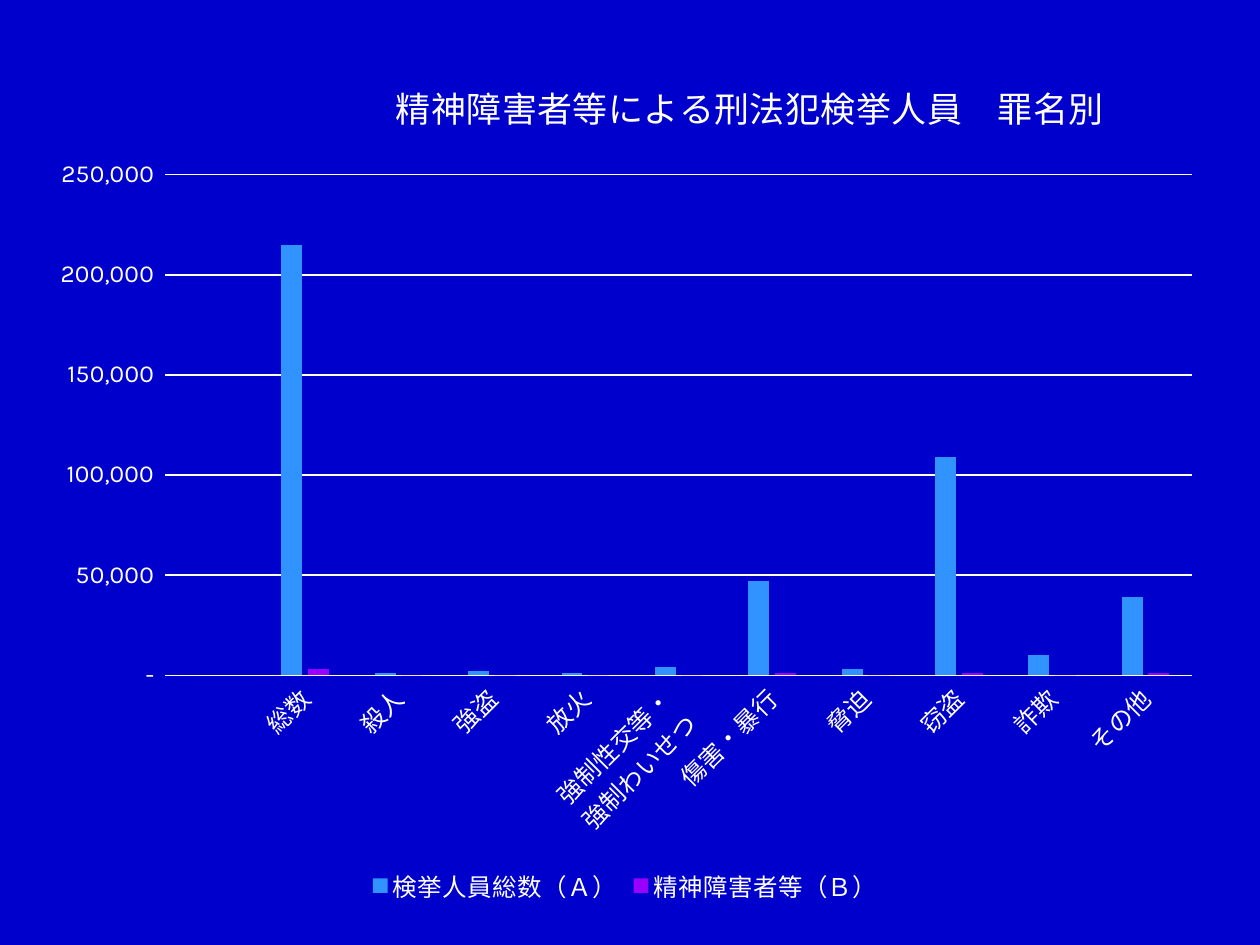
from dataclasses import dataclass
from typing import Optional

import pptx
import pptx.chart.data
import pptx.dml.color
import pptx.enum.chart
import pptx.oxml
import pptx.oxml.ns
import pptx.util
from pptx.util import Inches

RGBColor = pptx.dml.color.RGBColor
NAVY = RGBColor(0x00, 0x00, 0xCC)
WHITE = RGBColor(0xFF, 0xFF, 0xFF)
SKY = RGBColor(0x31, 0x93, 0xFF)
PURPLE = RGBColor(0x99, 0x00, 0xFF)
FONT = "Karla"
NUMBER_FORMAT = r'_(* #,##0_);_(* \(#,##0\);_(* "-"_);_(@_)'
LABEL_ROTATION = "-2700000"  # 45 degrees counter-clockwise


@dataclass
class OffenderGroup:
    name: str
    counts: list[Optional[int]]
    color: RGBColor


OFFENCES = ["", "総数", "殺人", "強盗", "放火", "強制性交等・\n強制わいせつ",
            "傷害・暴行", "脅迫", "窃盗", "詐欺", "その他"]
GROUPS = [
    OffenderGroup("検挙人員総数（Ａ）",
                  [None, 215000, 1000, 2000, 1000, 4000, 47000, 3000, 109000, 10000, 39000],
                  SKY),
    OffenderGroup("精神障害者等（Ｂ）",
                  [None, 3000, 0, 0, 0, 0, 1000, 0, 1000, 0, 1000],
                  PURPLE),
]


def style_font(font, size: int) -> None:
    font.name = FONT
    font.size = pptx.util.Pt(size)
    font.bold = False
    font.color.rgb = WHITE


def style_line(line) -> None:
    line.color.rgb = WHITE
    line.width = pptx.util.Pt(0.75)


def place(part, index: int, inner: bool = False, **fractions: float) -> None:
    """Give a chart part a manual layout in fractions of the chart area."""
    for old in part.findall(pptx.oxml.ns.qn("c:layout")):
        part.remove(old)
    settings = {"layoutTarget": "inner"} if inner else {}
    settings |= {"xMode": "edge", "yMode": "edge"} | fractions
    children = "".join(f'<c:{tag} val="{value}"/>' for tag, value in settings.items())
    part.insert(index, pptx.oxml.parse_xml(
        f'<c:layout {pptx.oxml.ns.nsdecls("c")}>'
        f"<c:manualLayout>{children}</c:manualLayout></c:layout>"))


def add_offence_chart(slide):
    chart_data = pptx.chart.data.CategoryChartData(number_format=NUMBER_FORMAT)
    chart_data.categories = OFFENCES
    for group in GROUPS:
        chart_data.add_series(group.name, group.counts)
    chart = slide.shapes.add_chart(
        pptx.enum.chart.XL_CHART_TYPE.COLUMN_CLUSTERED,
        Inches(0.28), Inches(0.36), Inches(9.37), Inches(6.85), chart_data).chart
    style_font(chart.font, 10)

    # Columns
    columns = chart.plots[0]
    columns.gap_width = 219
    columns.overlap = -27
    columns.vary_by_categories = False
    for series, group in zip(columns.series, GROUPS):
        series.invert_if_negative = False
        series.format.fill.solid()
        series.format.fill.fore_color.rgb = group.color
    place(chart.element.chart.plotArea, 0, inner=True, x=0.11, y=0.15, w=0.87, h=0.58)
    return chart


def style_axes(chart) -> None:
    offences, counts = chart.category_axis, chart.value_axis
    for axis in (offences, counts):
        axis.major_tick_mark = pptx.enum.chart.XL_TICK_MARK.NONE
        axis.minor_tick_mark = pptx.enum.chart.XL_TICK_MARK.NONE
        style_font(axis.tick_labels.font, 14)
    style_line(offences.format.line)
    for body in chart.element.xpath(".//c:catAx/c:txPr/a:bodyPr"):
        body.set("rot", LABEL_ROTATION)
        body.set("vert", "horz")

    counts.minimum_scale = 0
    counts.maximum_scale = 250000
    counts.major_unit = 50000
    counts.format.line.fill.background()
    style_line(counts.major_gridlines.format.line)
    counts.tick_labels.number_format = NUMBER_FORMAT
    counts.tick_labels.number_format_is_linked = False


def add_title_and_legend(chart) -> None:
    chart.has_title = True
    heading = chart.chart_title.text_frame
    heading.text = "精神障害者等による刑法犯検挙人員　罪名別"
    style_font(heading.paragraphs[0].runs[0].font, 20)
    chart.chart_title.include_in_layout = False
    place(chart.chart_title.element, 1, x=0.3, y=0.03)

    chart.has_legend = True
    chart.legend.position = pptx.enum.chart.XL_LEGEND_POSITION.BOTTOM
    chart.legend.include_in_layout = False
    style_font(chart.legend.font, 14)


def main() -> None:
    deck = pptx.Presentation()
    deck.slide_width, deck.slide_height = Inches(10), Inches(7.5)
    slide = deck.slides.add_slide(deck.slide_layouts[6])
    slide.background.fill.solid()
    slide.background.fill.fore_color.rgb = NAVY

    chart = add_offence_chart(slide)
    style_axes(chart)
    add_title_and_legend(chart)
    deck.save("out.pptx")


if __name__ == "__main__":
    main()
